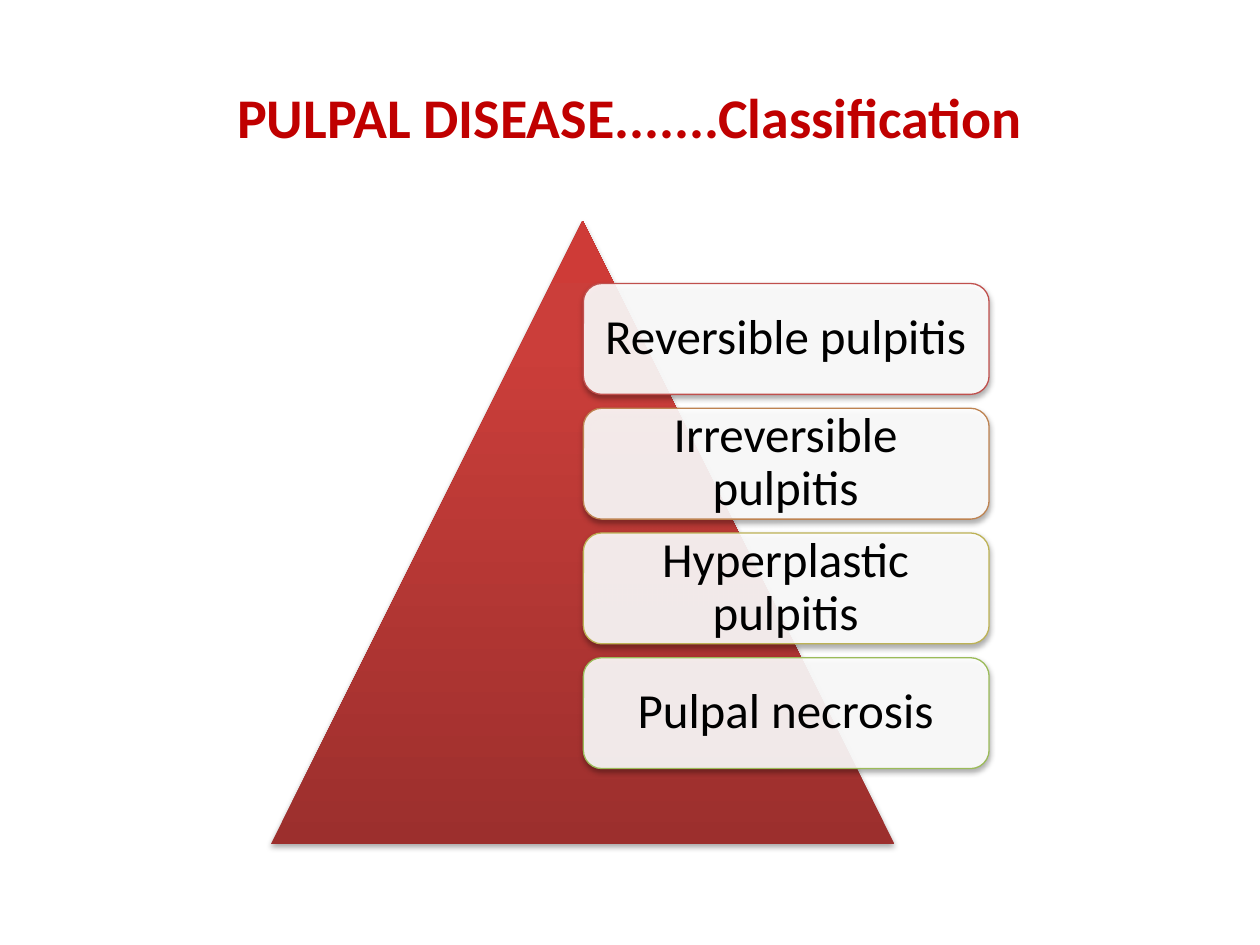
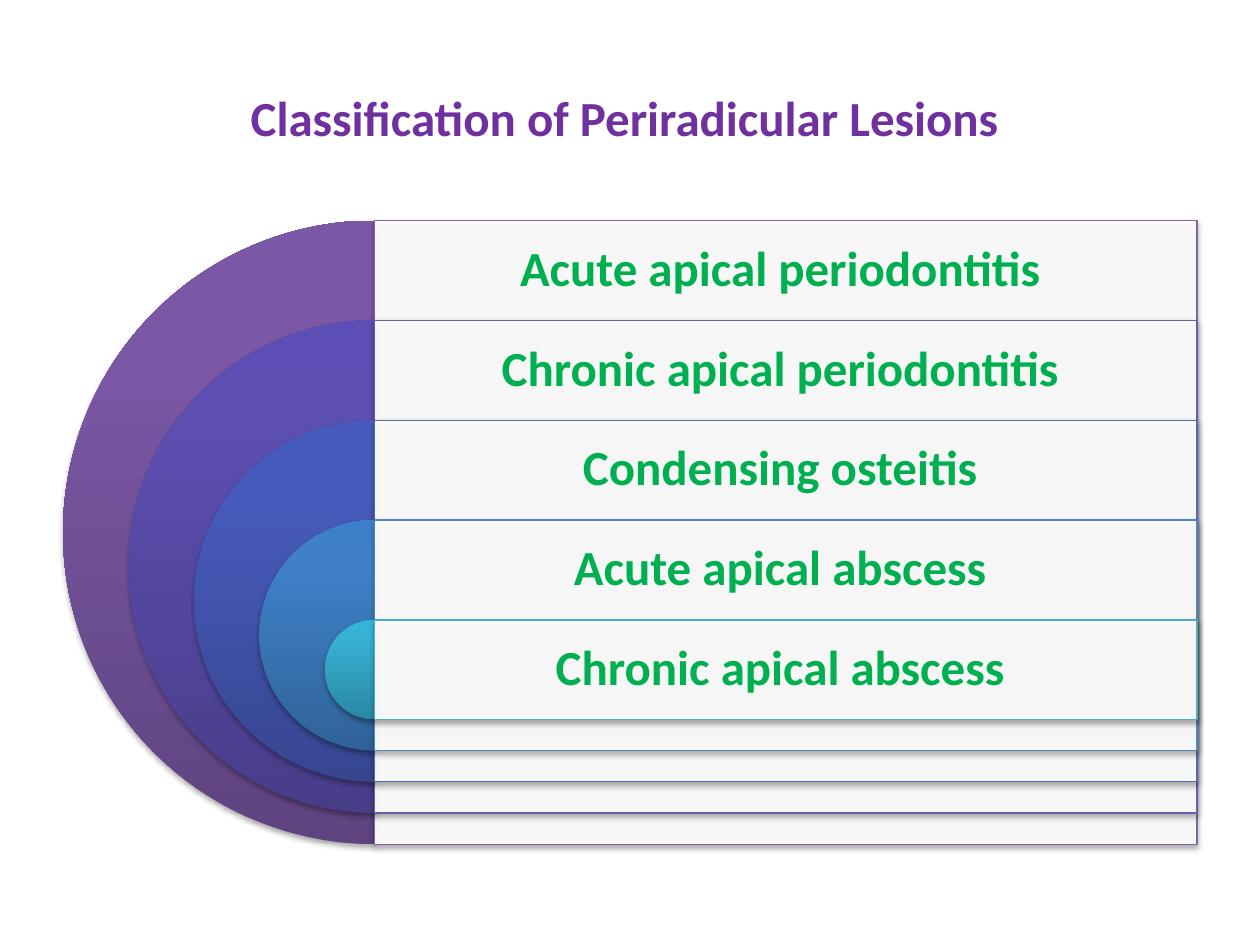
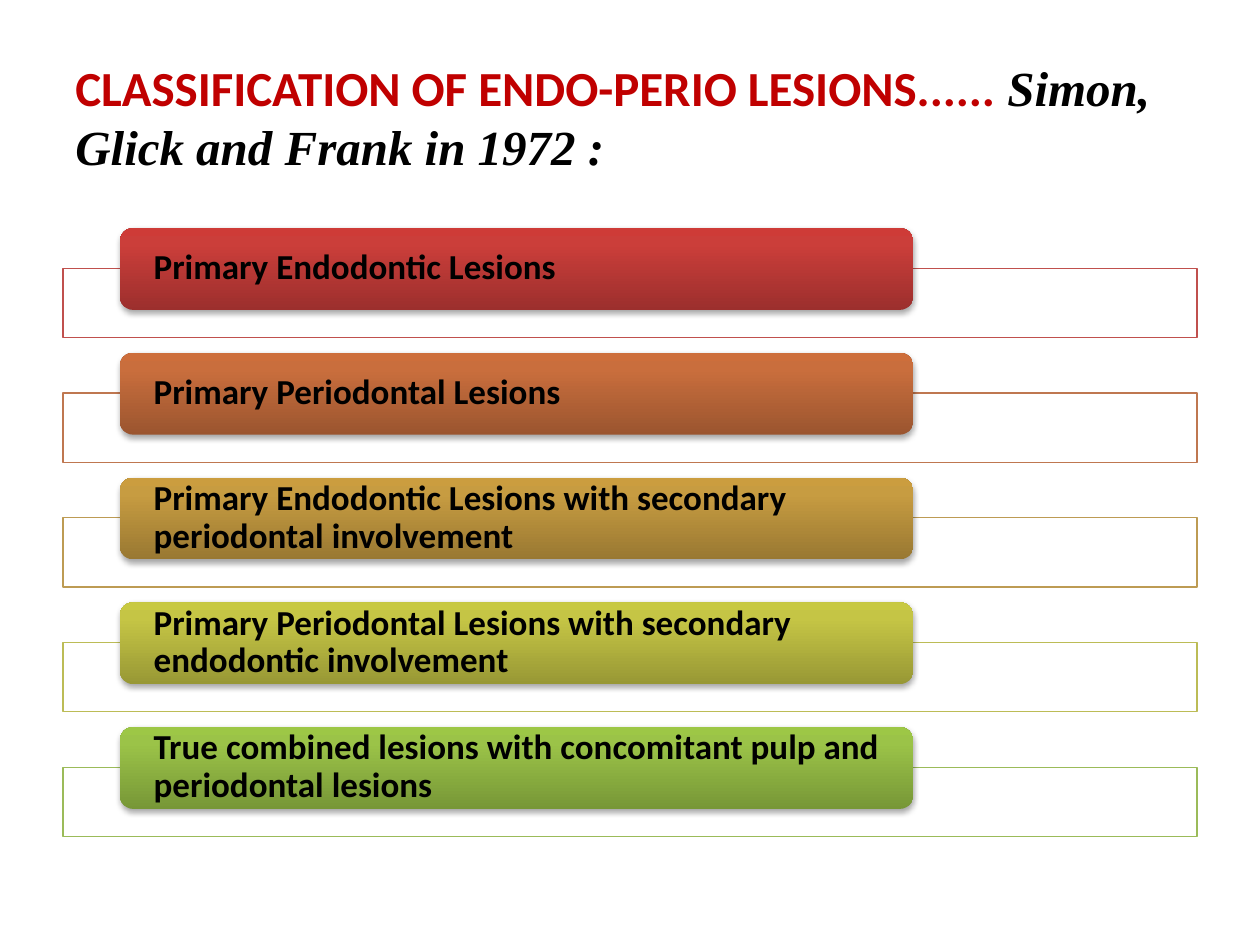
"""Build three slides that classify pulpal, periradicular and endo-perio lesions."""

import typing

import lxml.etree
import pptx
import pptx.dml.color
import pptx.enum.shapes
import pptx.enum.text
import pptx.oxml.ns
import pptx.util

Inches = pptx.util.Inches
Shape = pptx.enum.shapes.MSO_SHAPE
Align = pptx.enum.text.PP_ALIGN
qn = pptx.oxml.ns.qn

HEX = {
    "white": "FFFFFF", "black": "000000",
    "title": "C00000", "plum": "7030A0", "leaf": "00B050",
    "red_dark": "9C2F2D", "red_mid": "CB3E3A", "red_light": "CE3B37", "red_edge": "C0504D",
    "rust_dark": "9B552F", "rust_mid": "C96E3D", "rust_light": "CD6E3B", "rust_edge": "BF7750",
    "gold_dark": "997832", "gold_mid": "C79C41", "gold_light": "CB9D3F", "gold_edge": "BD9B53",
    "lime_dark": "989835", "lime_mid": "C5C545", "lime_light": "C8C942", "lime_edge": "BCBC56",
    "green_dark": "779737", "green_mid": "9BC348", "green_light": "9DC746", "green_edge": "9BBB59",
    "grape_dark": "5F4480", "grape_mid": "7B58A6", "grape_light": "7C57A8", "grape_edge": "8064A2",
    "iris_dark": "483D89", "iris_mid": "5D4FB1", "iris_light": "5C4EB4", "iris_edge": "685DAB",
    "blue_dark": "374691", "blue_mid": "475BBC", "blue_light": "455ABF", "blue_edge": "5767B4",
    "sky_dark": "306399", "sky_mid": "3F80C7", "sky_light": "3C80CB", "sky_edge": "5185BD",
    "teal_dark": "2A88A2", "teal_mid": "37B1D2", "teal_light": "34B4D6", "teal_edge": "4BACC6",
    "clay_edge": "BE8351", "sand_edge": "BDB255",
}
SANS = "Calibri"
SERIF = "Times New Roman"
PITCH = 0.99


class Box(typing.NamedTuple):
    left: float
    top: float
    width: float
    height: float


class Run(typing.NamedTuple):
    text: str
    size: int
    color: str
    bold: bool = True
    slant: bool = False
    font: str = SANS


class Item(typing.NamedTuple):
    text: str
    hue: str


STAGES = [
    Item("Reversible pulpitis", "red"),
    Item("Irreversible pulpitis", "clay"),
    Item("Hyperplastic pulpitis", "sand"),
    Item("Pulpal necrosis", "green"),
]
LAYERS = [
    Item("Acute apical periodontitis ", "grape"),
    Item("Chronic apical periodontitis ", "iris"),
    Item("Condensing osteitis ", "blue"),
    Item("Acute apical abscess ", "sky"),
    Item("Chronic apical abscess ", "teal"),
]
LESIONS = [
    Item("Primary Endodontic Lesions", "red"),
    Item("Primary Periodontal Lesions", "rust"),
    Item("Primary Endodontic Lesions with secondary periodontal involvement", "gold"),
    Item("Primary Periodontal Lesions with secondary endodontic involvement", "lime"),
    Item("True combined lesions with concomitant pulp and periodontal lesions", "green"),
]


def place(box: Box) -> list:
    return [Inches(side) for side in box]


def rgb(name: str):
    return pptx.dml.color.RGBColor.from_string(HEX[name])


def node(parent, tag: str, **attrs):
    return lxml.etree.SubElement(parent, qn(tag), {key: str(val) for key, val in attrs.items()})


def shade(shape) -> None:
    effects = shape._element.spPr.find(qn("a:effectLst"))
    outer = node(effects, "a:outerShdw", blurRad=40000, dist=23000, dir=5400000, rotWithShape=0)
    node(node(outer, "a:srgbClr", val=HEX["black"]), "a:alpha", val=35000)


def add_solid(shapes, kind, box: Box, hue: str):
    """Add a gradient shape without outline, with a soft shadow."""
    shape = shapes.add_shape(kind, *place(box))
    shape.shadow.inherit = False
    shape.line.fill.background()
    fill = lxml.etree.Element(qn("a:gradFill"), rotWithShape="1")
    stops = node(fill, "a:gsLst")
    for pos, tint in ((0, "dark"), (80, "mid"), (100, "light")):
        node(node(stops, "a:gs", pos=pos * 1000), "a:srgbClr", val=HEX[f"{hue}_{tint}"])
    node(fill, "a:lin", ang=16200000, scaled=0)
    shape._element.spPr.find(qn("a:prstGeom")).addnext(fill)
    shade(shape)
    return shape


def add_panel(shapes, kind, box: Box, hue: str, shadow: bool = True) -> None:
    """Add a thinly outlined white shape that lets a little show through."""
    shape = shapes.add_shape(kind, *place(box))
    shape.shadow.inherit = False
    shape.fill.solid()
    shape.fill.fore_color.rgb = rgb("white")
    tint = shape._element.spPr.find(qn("a:solidFill")).find(qn("a:srgbClr"))
    node(tint, "a:alpha", val=90000)
    shape.line.color.rgb = rgb(f"{hue}_edge")
    shape.line.width = pptx.util.Pt(0.75)
    if shadow:
        shade(shape)


def add_text(shapes, box: Box, runs: list[Run], align=Align.CENTER,
             pad: tuple[float, float] = (0.12, 0.12), lead: float = 0.9) -> None:
    """Add a wrapped, middle-anchored text box."""
    frame = shapes.add_textbox(*place(box)).text_frame
    frame.word_wrap = True
    frame.vertical_anchor = pptx.enum.text.MSO_ANCHOR.MIDDLE
    frame.margin_left = frame.margin_right = Inches(pad[0])
    frame.margin_top = frame.margin_bottom = Inches(pad[1])
    para = frame.paragraphs[0]
    para.alignment = align
    para.line_spacing = lead
    for part in runs:
        run = para.add_run()
        run.text = part.text
        font = run.font
        font.name, font.size = part.font, pptx.util.Pt(part.size)
        font.bold, font.italic = part.bold, part.slant
        font.color.rgb = rgb(part.color)


def add_slide(deck, runs: list[Run], align=Align.CENTER):
    """Add a titled slide and return the shapes of its diagram group."""
    slide = deck.slides.add_slide(deck.slide_layouts[6])
    add_text(slide.shapes, Box(0.5, 0.3, 9, 1.25), runs, align, (0.1, 0.05), 1.0)
    return slide.shapes.add_group_shape().shapes


def draw_stages(deck) -> None:
    """Draw the pyramid with its list of pulpal diseases."""
    shapes = add_slide(deck, [Run("PULPAL DISEASE.......Classification", 32, "title")])
    add_solid(shapes, Shape.ISOSCELES_TRIANGLE, Box(2.15, 1.75, 4.95, 4.95), "red")
    for row, item in enumerate(STAGES):
        top = 2.25 + row * PITCH
        add_panel(shapes, Shape.ROUNDED_RECTANGLE, Box(4.63, top, 3.22, 0.88), item.hue)
        add_text(shapes, Box(4.67, top + 0.04, 3.13, 0.79),
                 [Run(item.text, 28, "black", bold=False)])


def draw_layers(deck) -> None:
    """Draw the nested half discs with their periradicular lesions."""
    shapes = add_slide(deck, [Run("Classification of Periradicular Lesions ", 28, "plum")])
    step = 3.17 / 4
    for row, item in enumerate(LAYERS):
        top = 1.75 + row * step
        size = 4.95 - row * 1.04
        disc = add_solid(shapes, Shape.PIE, Box(0.5 + row * 0.52, top, size, size), item.hue)
        disc.adjustments[0], disc.adjustments[1] = 54, 162
        add_panel(shapes, Shape.RECTANGLE, Box(2.97, top, 6.53, size), item.hue)
        add_text(shapes, Box(2.97, top, 6.53, 0.79), [Run(item.text, 28, "leaf")])


def draw_lesions(deck) -> None:
    """Draw the stacked bars of endo-perio lesions."""
    shapes = add_slide(deck, [
        Run("CLASSIFICATION OF ENDO-PERIO LESIONS......", 28, "title"),
        Run(" Simon, Glick and Frank in 1972 :", 28, "black", slant=True, font=SERIF),
    ], Align.LEFT)
    for row, item in enumerate(LESIONS):
        drop = row * PITCH
        add_panel(shapes, Shape.RECTANGLE, Box(0.5, 2.13 + drop, 9, 0.55), item.hue, False)
        add_solid(shapes, Shape.ROUNDED_RECTANGLE, Box(0.95, 1.81 + drop, 6.3, 0.65), item.hue)
        add_text(shapes, Box(0.98, 1.84 + drop, 6.24, 0.58),
                 [Run(item.text, 20, "black")], Align.LEFT, (0.24, 0))


def main() -> None:
    """Build and save the deck."""
    deck = pptx.Presentation()
    deck.slide_width, deck.slide_height = Inches(10), Inches(7.5)
    draw_stages(deck)
    draw_layers(deck)
    draw_lesions(deck)
    deck.save("out.pptx")


if __name__ == "__main__":
    main()
